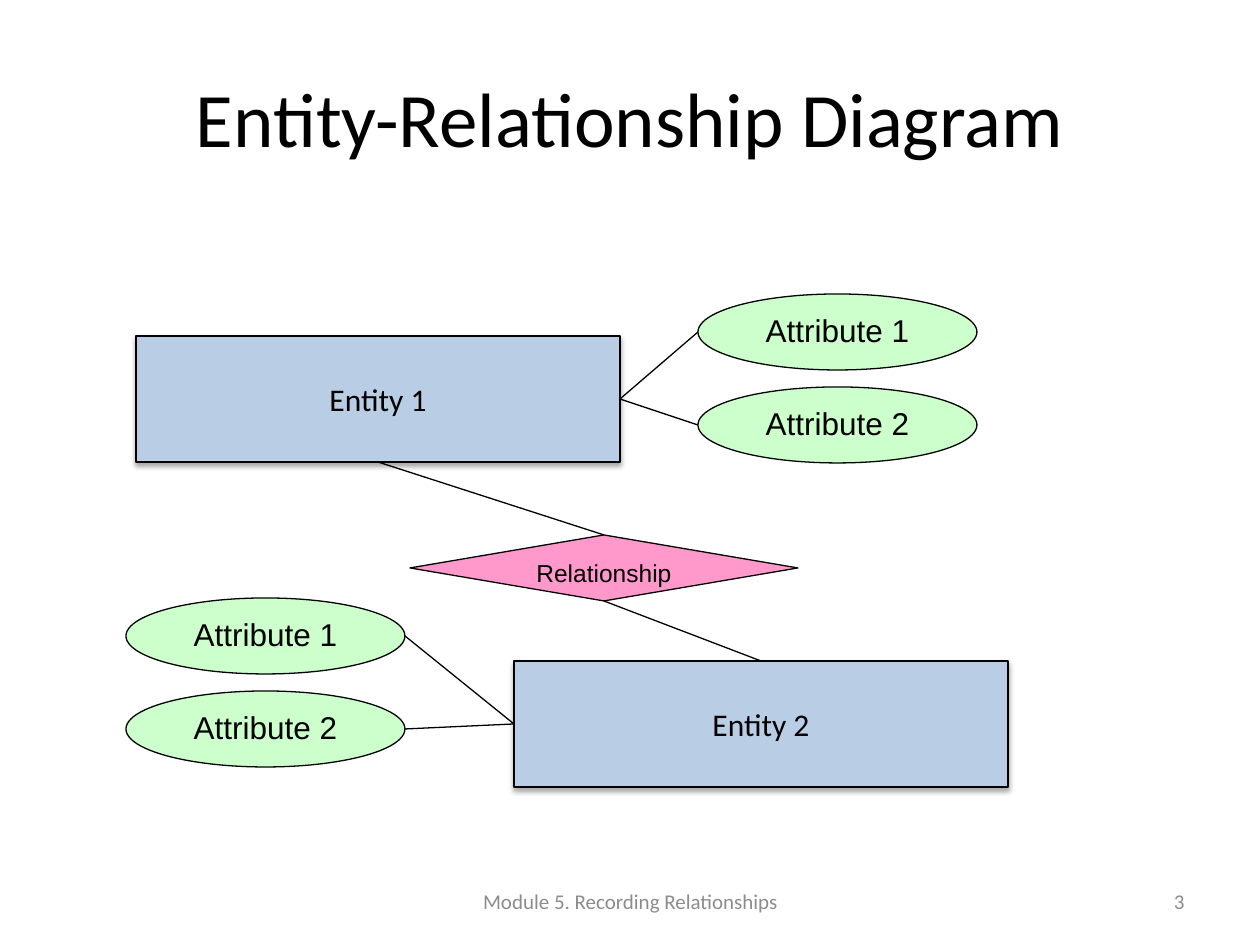
from dataclasses import dataclass

from lxml import etree
from pptx import Presentation
from pptx import util as u
from pptx.dml.color import RGBColor
from pptx.enum import shapes, text
from pptx.oxml.ns import qn

PX_PER_INCH = 126
SLIDE = (1260, 945)


@dataclass(frozen=True)
class Theme:
    ink: str = "000000"
    muted: str = "8C8C8C"
    entity: str = "B9CDE5"
    relationship: str = "FF99CC"
    attribute: str = "CCFFCC"
    sans: str = "Calibri"
    plain: str = "Arial"
    title: int = 44
    label: int = 18
    small: int = 14
    footer: int = 12
    line: float = 0.75


THEME = Theme()
ALIGN, ANCHOR, PRESET = text.PP_ALIGN, text.MSO_ANCHOR, shapes.MSO_SHAPE

# words, (left, top, width, height), size, colour, alignment
CAPTIONS = [
    ("Entity-Relationship Diagram", (63, 38, 1134, 157), THEME.title, THEME.ink, ALIGN.CENTER),
    ("Module 5. Recording Relationships", (431, 876, 399, 50), THEME.footer, THEME.muted, ALIGN.CENTER),
    ("3", (903, 876, 294, 50), THEME.footer, THEME.muted, ALIGN.RIGHT),
]

KINDS = {
    "entity": dict(preset=PRESET.RECTANGLE, fill=THEME.entity, size=THEME.label,
                   font=THEME.sans, anchor=ANCHOR.MIDDLE, shadow=True),
    "relationship": dict(preset=PRESET.FLOWCHART_DECISION, fill=THEME.relationship, size=THEME.small,
                         font=THEME.plain, anchor=ANCHOR.TOP, shadow=False),
    "attribute": dict(preset=PRESET.OVAL, fill=THEME.attribute, size=THEME.label,
                      font=THEME.plain, anchor=ANCHOR.TOP, shadow=False),
}

ENTITY_HEIGHT = 126
ATTRIBUTE_SIZE = (279, 76)
ATTRIBUTE_STEP = 93
ATTRIBUTES = ["Attribute 1", "Attribute 2"]

# words, (left, top), width, (left, top) of its attributes, side facing them
ENTITIES = [
    ("Entity 1", (136, 336), 484, (698, 294), "right"),
    ("Entity 2", (514, 661), 494, (126, 598), "left"),
]
RELATIONSHIP = ("Relationship", (410, 535, 388, 66))

SIDES = {"left": (0, 0.5), "right": (1, 0.5), "top": (0.5, 0), "bottom": (0.5, 1)}
OPPOSITE = {"left": "right", "right": "left"}


def emu(*lengths):
    return [u.Emu(round(length * 914400 / PX_PER_INCH)) for length in lengths]


def side_point(area, side):
    left, top, width, height = area
    across, down = SIDES[side]
    return left + across * width, top + down * height


def write(shape, words, size, font, color, align, anchor):
    frame = shape.text_frame
    frame.word_wrap = True
    frame.vertical_anchor = anchor
    para = frame.paragraphs[0]
    para.alignment = align
    span = para.add_run()
    span.text = words
    for name, value in {"size": u.Pt(size), "name": font}.items():
        setattr(span.font, name, value)
    span.font.color.rgb = RGBColor.from_string(color)


def draw_outline(item):
    item.line.color.rgb = RGBColor.from_string(THEME.ink)
    item.line.width = u.Pt(THEME.line)


def add_drop_shadow(shape):
    effects = shape._element.spPr.find(qn("a:effectLst"))
    shadow = etree.SubElement(effects, qn("a:outerShdw"), blurRad="40000", dist="23000",
                              dir="5400000", rotWithShape="0")
    color = etree.SubElement(shadow, qn("a:srgbClr"), val=THEME.ink)
    etree.SubElement(color, qn("a:alpha"), val="35000")


def add_node(page, kind, words, area):
    style = KINDS[kind]
    shape = page.shapes.add_shape(style["preset"], *emu(*area))
    shape.shadow.inherit = False
    shape.fill.solid()
    shape.fill.fore_color.rgb = RGBColor.from_string(style["fill"])
    draw_outline(shape)
    if style["shadow"]:
        add_drop_shadow(shape)
    write(shape, words, style["size"], style["font"], THEME.ink, ALIGN.CENTER, style["anchor"])


def add_link(page, start, end):
    link = page.shapes.add_connector(shapes.MSO_CONNECTOR.STRAIGHT, *emu(*start, *end))
    draw_outline(link)
    etree.SubElement(link._element.spPr, qn("a:effectLst"))


def plan_diagram():
    """Return the nodes and the links between their sides."""
    words, diamond = RELATIONSHIP
    nodes, links = [("relationship", words, diamond)], []
    for (name, corner, width, (left, top), side), exit_side, diamond_side in zip(
            ENTITIES, ("bottom", "top"), ("top", "bottom")):
        entity = (*corner, width, ENTITY_HEIGHT)
        nodes.append(("entity", name, entity))
        links.append((side_point(entity, exit_side), side_point(diamond, diamond_side)))
        for row, attribute in enumerate(ATTRIBUTES):
            area = (left, top + row * ATTRIBUTE_STEP, *ATTRIBUTE_SIZE)
            nodes.append(("attribute", attribute, area))
            links.append((side_point(area, OPPOSITE[side]), side_point(entity, side)))
    return nodes, links


def main():
    deck = Presentation()
    deck.slide_width, deck.slide_height = emu(*SLIDE)
    page = deck.slides.add_slide(deck.slide_layouts[6])
    for words, area, size, color, align in CAPTIONS:
        box = page.shapes.add_textbox(*emu(*area))
        write(box, words, size, THEME.sans, color, align, ANCHOR.MIDDLE)
    nodes, links = plan_diagram()
    for node in nodes:
        add_node(page, *node)
    for link in links:
        add_link(page, *link)
    deck.save("out.pptx")


if __name__ == "__main__":
    main()
